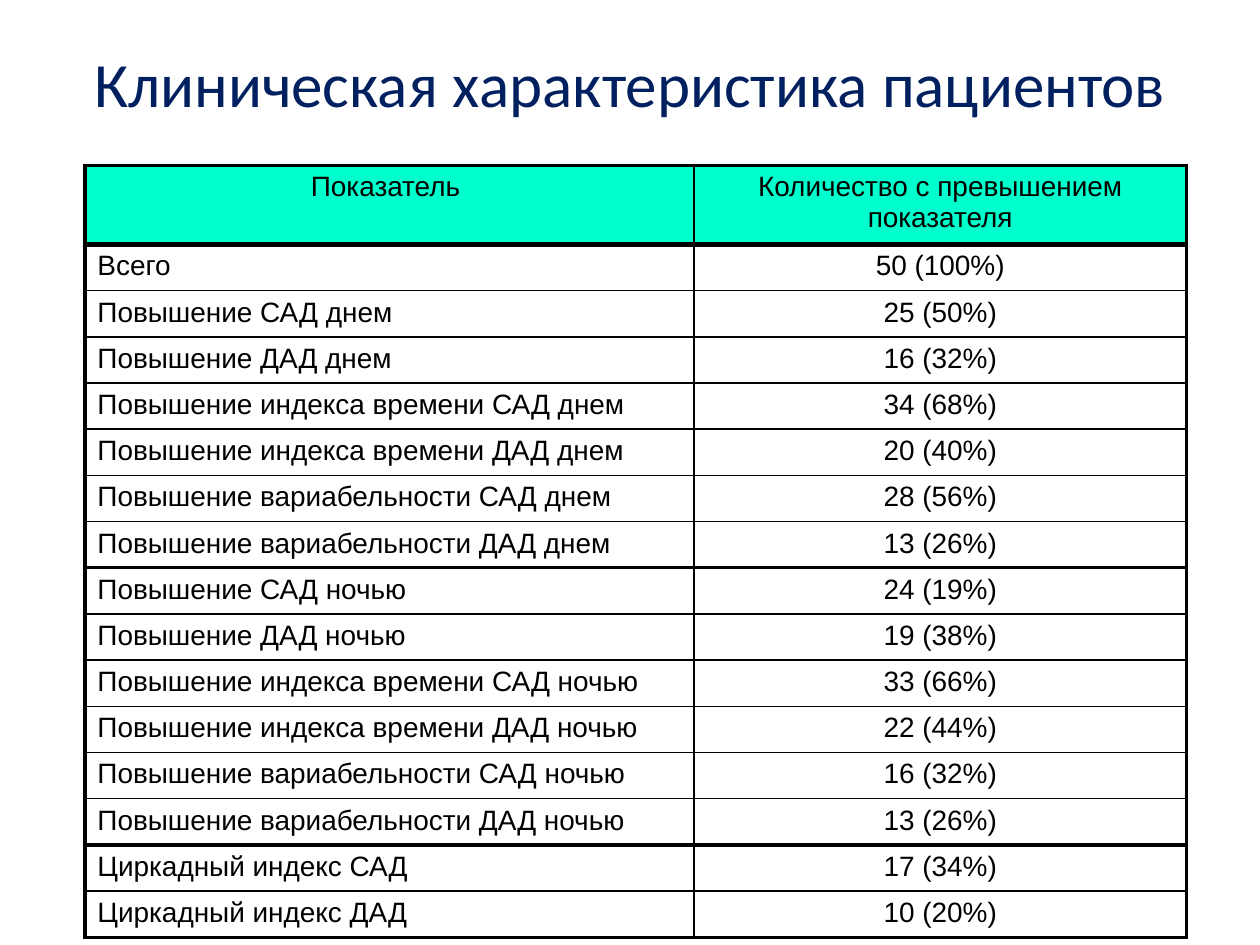
from lxml.etree import SubElement
from pptx import Presentation
from pptx.dml.color import RGBColor
from pptx.enum.text import MSO_ANCHOR, PP_ALIGN
from pptx.oxml.ns import qn
from pptx.util import Pt

TITLE = "Клиническая характеристика пациентов"
ROWS = [
    ("Показатель ", "Количество с превышением показателя"),
    ("Всего", "50 (100%)"),
    ("Повышение САД днем", "25 (50%)"),
    ("Повышение ДАД днем", "16 (32%)"),
    ("Повышение индекса времени САД днем", "34 (68%)"),
    ("Повышение индекса времени ДАД днем", "20 (40%)"),
    ("Повышение вариабельности САД днем", "28 (56%)"),
    ("Повышение вариабельности ДАД днем", "13 (26%)"),
    ("Повышение САД ночью", "24 (19%)"),
    ("Повышение ДАД ночью", "19 (38%)"),
    ("Повышение индекса времени САД ночью", "33 (66%)"),
    ("Повышение индекса времени ДАД ночью", "22 (44%)"),
    ("Повышение вариабельности САД ночью", "16 (32%)"),
    ("Повышение вариабельности ДАД ночью", "13 (26%)"),
    ("Циркадный индекс САД", "17 (34%)"),
    ("Циркадный индекс ДАД", "10 (20%)"),
]
THIN, THICK, HEADER_RULE = 1, 2.25, 3
ROW_RULES = {0: THICK, 1: HEADER_RULE, 8: THICK, 14: THICK, len(ROWS): THICK}
COLUMN_RULES = [THICK, THIN, THICK]
COLUMN_SHARE = 0.553
HEADER_HEIGHT = 45.2


def color(value):
    """Turn a hex string into a colour."""
    return RGBColor.from_string(value)


def style(para, name, size, value, align):
    """Format a paragraph as a whole."""
    para.alignment = align
    para.font.name = name
    para.font.size = Pt(size)
    para.font.color.rgb = color(value)


def add_title(page, left, top, width, height):
    """Fill the title placeholder and fit it to its box."""
    title = page.shapes.title
    title.left, title.top, title.width, title.height = map(Pt, (left, top, width, height))
    title.text_frame.text = TITLE
    title.text_frame.vertical_anchor = MSO_ANCHOR.MIDDLE
    style(title.text_frame.paragraphs[0], "Calibri", 36, "002060", PP_ALIGN.CENTER)


def set_borders(cell, **widths):
    """Draw black cell borders with the given widths in points."""
    properties = cell._tc.get_or_add_tcPr()
    for side in "LRTB":
        line = SubElement(properties, qn(f"a:ln{side}"), w=str(Pt(widths[side])))
        fill = SubElement(line, qn("a:solidFill"))
        SubElement(fill, qn("a:srgbClr"), val="000000")


def fill_cell(cell, row, column):
    """Write one cell with its fill, rules and text."""
    set_borders(
        cell,
        L=COLUMN_RULES[column],
        R=COLUMN_RULES[column + 1],
        T=ROW_RULES.get(row, THIN),
        B=ROW_RULES.get(row + 1, THIN),
    )
    if row == 0:
        cell.fill.solid()
        cell.fill.fore_color.rgb = color("00FFCC")
    else:
        cell.fill.background()
    cell.text = ROWS[row][column]
    centered = row == 0 or column == 1
    align = PP_ALIGN.CENTER if centered else PP_ALIGN.LEFT
    style(cell.text_frame.paragraphs[0], "Arial", 16, "000000", align)


def add_patient_table(page, left, top, width, height):
    """Place the table of patient indicators in its box."""
    table = page.shapes.add_table(
        len(ROWS), 2, Pt(left), Pt(top), Pt(width), Pt(height)
    ).table
    table.first_row = table.horz_banding = False
    table.columns[0].width = Pt(width * COLUMN_SHARE)
    table.columns[1].width = Pt(width * (1 - COLUMN_SHARE))
    body_height = (height - HEADER_HEIGHT) / (len(ROWS) - 1)
    for row in range(len(ROWS)):
        table.rows[row].height = Pt(body_height if row else HEADER_HEIGHT)
        for column in range(2):
            fill_cell(table.cell(row, column), row, column)


def main():
    """Build the slide and save the deck."""
    deck = Presentation()
    deck.slide_width, deck.slide_height = Pt(720), Pt(540)
    page = deck.slides.add_slide(deck.slide_layouts[5])
    add_title(page, 36, 0, 648, 94.5)
    add_patient_table(page, 48.5, 94.5, 629.5, 441.2)
    deck.save("out.pptx")


if __name__ == "__main__":
    main()
